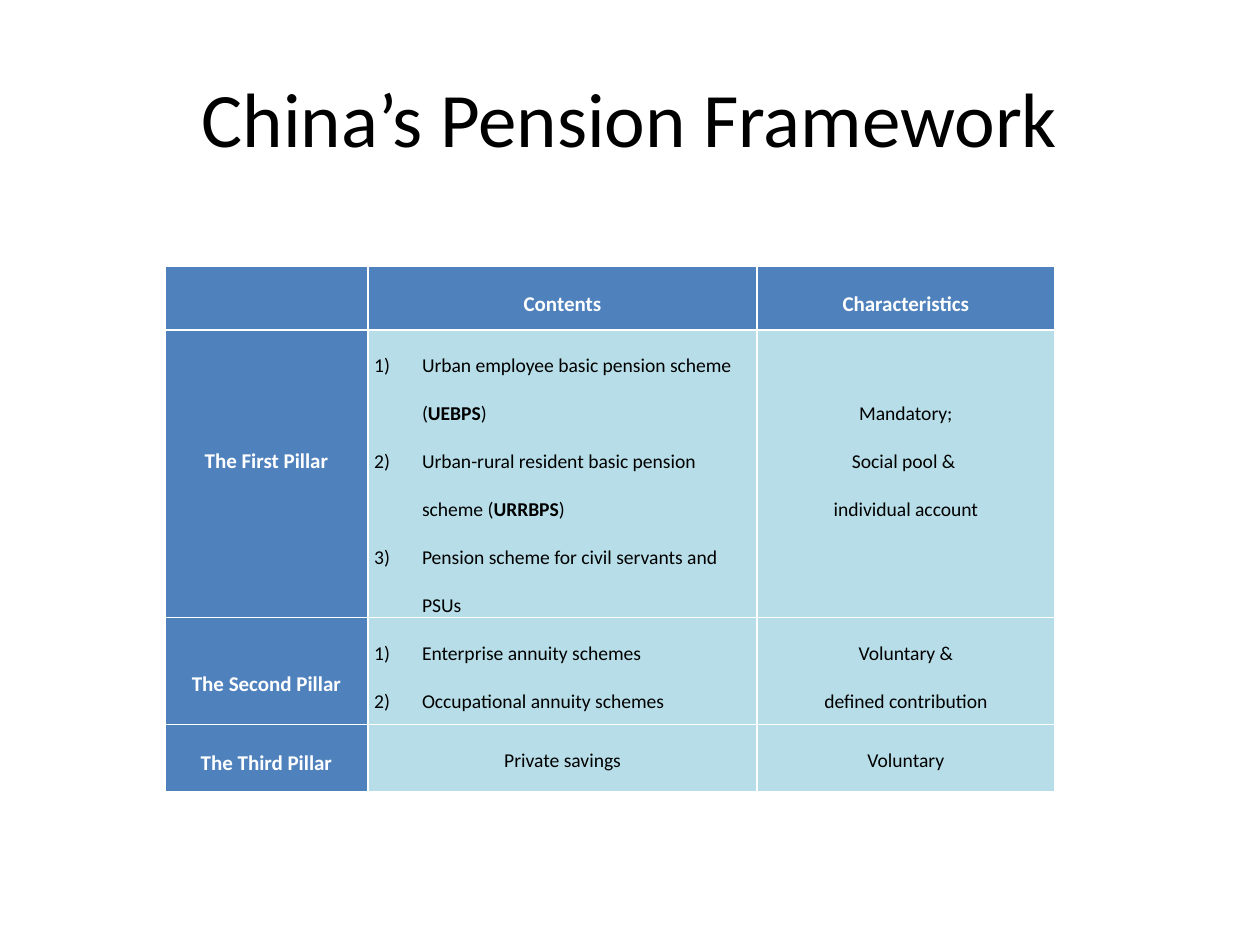
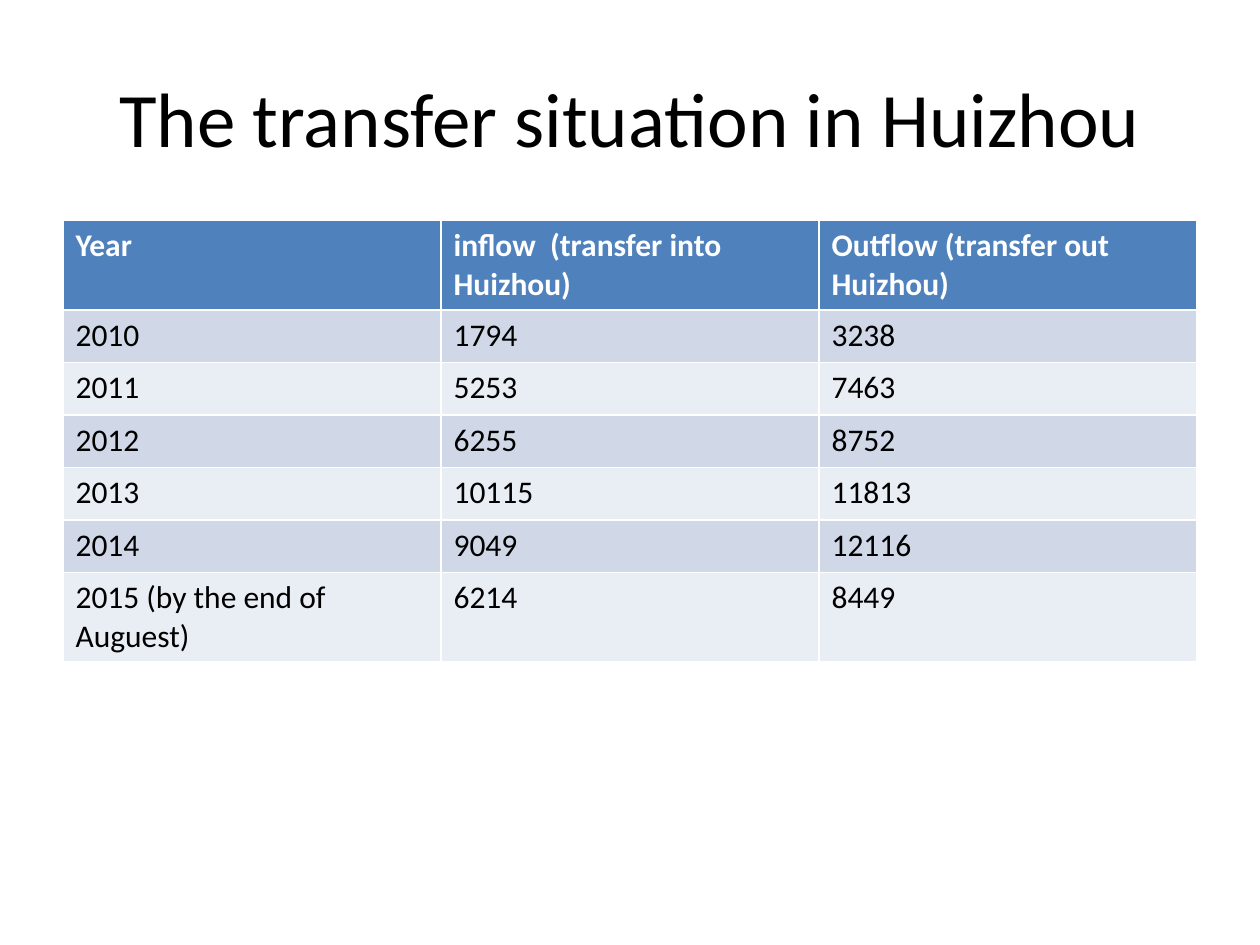
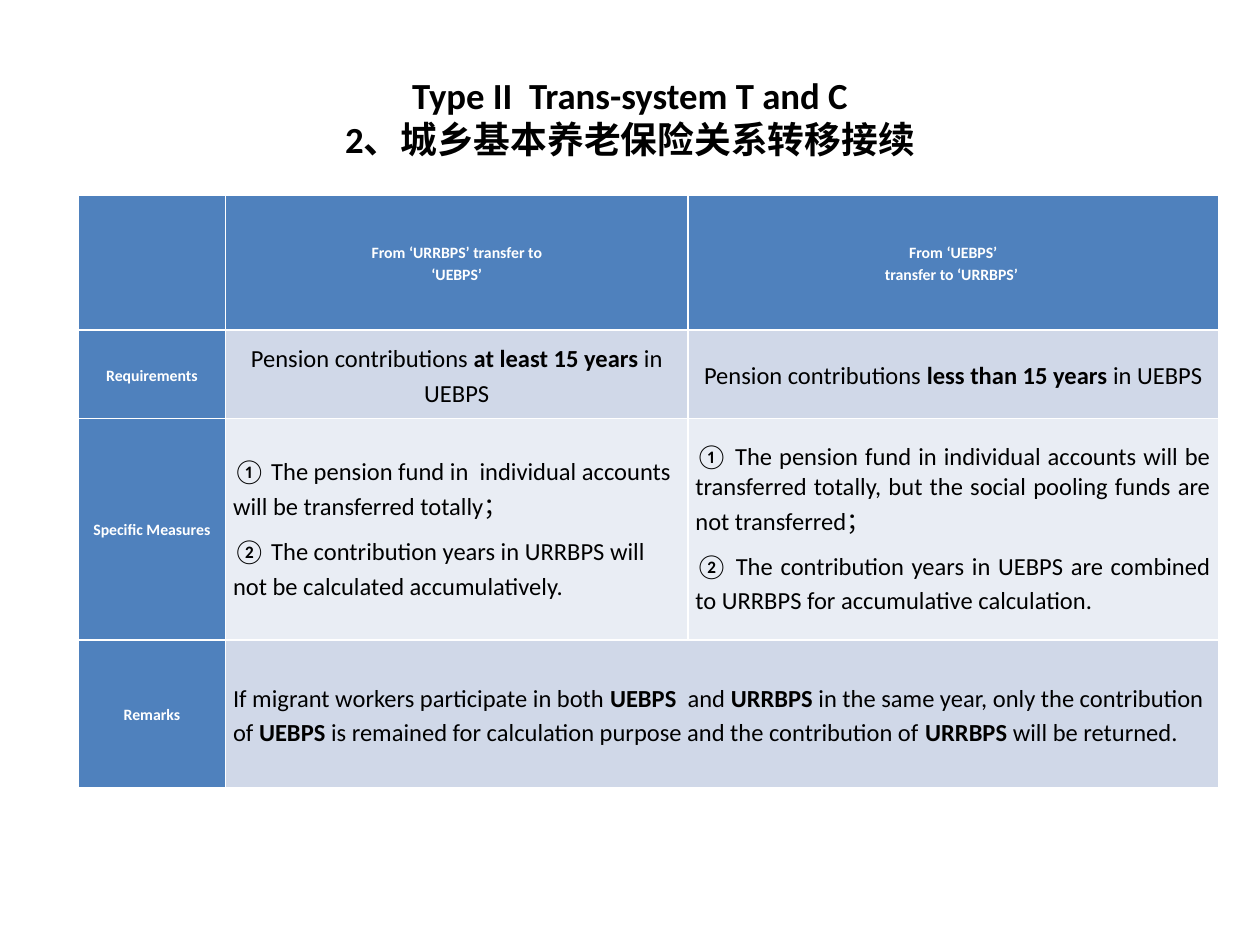
from dataclasses import dataclass, replace

from lxml.etree import SubElement
from pptx import Presentation
from pptx.dml.color import RGBColor
from pptx.enum.text import MSO_ANCHOR as Anchor, PP_ALIGN as Align
from pptx.oxml.ns import qn
from pptx.util import Emu, Inches, Pt

COLORS = {
    "header": "4F81BD",
    "light": "FFFFFF",
    "dark": "000000",
    "aqua": "B7DEE8",
    "band": "D0D8E8",
    "pale": "E9EDF4",
}
FONT = "Calibri"
WIDTH, HEIGHT = Inches(10), Inches(7.5)
TITLE_ONLY = 5
NUMBER_INDENT = 3.8


@dataclass(frozen=True)
class Style:
    size: float
    fill: str
    color: str = "dark"
    bold: bool = False
    align: Align = Align.LEFT
    anchor: Anchor = Anchor.TOP
    spacing: float = 1.0
    first_spacing: float | None = None
    first_gap: float = 0
    numbered: bool = False
    side: float = 1.0
    top: float = 0
    bottom: float = 0


@dataclass(frozen=True)
class Cell:
    style: Style
    lines: tuple[str, ...] = ()
    span: int = 1


@dataclass(frozen=True)
class TableSlide:
    title: tuple[str, ...]
    title_size: float
    title_bold: bool
    left: float
    top: float
    columns: tuple[float, ...]
    rows: tuple[float, ...]
    cells: tuple[tuple[Cell, ...], ...]


def across(percent: float) -> Emu:
    return Emu(round(WIDTH * percent / 100))


def down(percent: float) -> Emu:
    return Emu(round(HEIGHT * percent / 100))


def add_run(paragraph, text: str, size: float, color: str, bold: bool) -> None:
    run = paragraph.add_run()
    run.text = text
    run.font.name = FONT
    run.font.size = Pt(size)
    run.font.bold = bold
    run.font.color.rgb = RGBColor.from_string(COLORS[color])


def add_number(paragraph) -> None:
    properties = paragraph._p.get_or_add_pPr()
    indent = across(NUMBER_INDENT)
    properties.set("marL", str(indent))
    properties.set("indent", str(-indent))
    SubElement(properties, qn("a:buFont"), typeface="+mj-lt")
    SubElement(properties, qn("a:buAutoNum"), type="arabicParenR")


def fill_cell(table_cell, cell: Cell) -> None:
    style = cell.style
    table_cell.fill.solid()
    table_cell.fill.fore_color.rgb = RGBColor.from_string(COLORS[style.fill])
    table_cell.vertical_anchor = style.anchor
    table_cell.margin_left = table_cell.margin_right = across(style.side)
    table_cell.margin_top = down(style.top)
    table_cell.margin_bottom = down(style.bottom)
    frame = table_cell.text_frame
    for index, line in enumerate(cell.lines):
        paragraph = frame.add_paragraph() if index else frame.paragraphs[0]
        paragraph.alignment = style.align
        paragraph.line_spacing = style.spacing
        if index == 0:
            paragraph.line_spacing = style.first_spacing or style.spacing
            paragraph.space_after = Pt(style.first_gap)
        if style.numbered:
            add_number(paragraph)
        for position, text in enumerate(line.split("**")):
            if text:
                add_run(paragraph, text, style.size, style.color, style.bold or position % 2 == 1)


def add_title(slide, content: TableSlide) -> None:
    paragraph = slide.shapes.title.text_frame.paragraphs[0]
    paragraph.alignment = Align.CENTER
    for index, line in enumerate(content.title):
        if index:
            paragraph.add_line_break()
        add_run(paragraph, line, content.title_size, "dark", content.title_bold)


def add_table_slide(presentation, content: TableSlide) -> None:
    slide = presentation.slides.add_slide(presentation.slide_layouts[TITLE_ONLY])
    add_title(slide, content)
    table = slide.shapes.add_table(
        len(content.rows), len(content.columns),
        across(content.left), down(content.top),
        across(sum(content.columns)), down(sum(content.rows)),
    ).table
    table.horz_banding = False
    for column, width in zip(table.columns, content.columns):
        column.width = across(width)
    for row, height in zip(table.rows, content.rows):
        row.height = down(height)
    for row_index, row_cells in enumerate(content.cells):
        for column_index, cell in enumerate(row_cells):
            table_cell = table.cell(row_index, column_index)
            if cell.span > 1:
                table_cell.merge(table.cell(row_index, column_index + cell.span - 1))
            fill_cell(table_cell, cell)


def framework_slide() -> TableSlide:
    header = Style(12, "header", "light", True, Align.CENTER, spacing=2, side=0.5)
    label = replace(header, anchor=Anchor.MIDDLE)
    centered = Style(11.2, "aqua", align=Align.CENTER, spacing=2, side=0.5)
    numbered = replace(centered, align=Align.LEFT, numbered=True)
    return TableSlide(
        title=("China’s Pension Framework",), title_size=44, title_bold=False,
        left=13.1, top=28.13,
        columns=(16.1, 30.9, 23.6), rows=(6.8, 30.4, 11.33, 7.07),
        cells=(
            (Cell(header), Cell(header, ("Contents",)), Cell(header, ("Characteristics",))),
            (
                Cell(replace(label, bottom=5.43), ("The First Pillar",)),
                Cell(replace(numbered, anchor=Anchor.MIDDLE), (
                    "Urban employee basic pension scheme (**UEBPS**)",
                    "Urban-rural resident basic pension scheme (**URRBPS**)",
                    "Pension scheme for civil servants and PSUs",
                )),
                Cell(replace(centered, anchor=Anchor.MIDDLE, bottom=5.07),
                     ("Mandatory;", "Social pool & ", "individual account")),
            ),
            (
                Cell(label, ("The Second Pillar",)),
                Cell(numbered, ("Enterprise annuity schemes", "Occupational annuity schemes")),
                Cell(centered, ("Voluntary &", "defined contribution")),
            ),
            (
                Cell(header, ("The Third Pillar",)),
                Cell(centered, ("Private savings",)),
                Cell(centered, ("Voluntary",)),
            ),
        ),
    )


def transfer_slide() -> TableSlide:
    header = Style(18, "header", "light", True, top=0.67, bottom=0.67)
    bands = [replace(header, fill=fill, color="dark", bold=False) for fill in ("band", "pale")]
    headings = ("Year", "inflow  (transfer into Huizhou)", "Outflow (transfer out  Huizhou)")
    transfers = (
        ("2010", "1794", "3238"),
        ("2011", "5253", "7463"),
        ("2012", "6255", "8752"),
        ("2013", "10115", "11813"),
        ("2014", "9049", "12116"),
        ("2015 (by the end of Auguest)", "6214", "8449"),
    )
    return TableSlide(
        title=("The transfer situation in Huizhou",), title_size=44, title_bold=False,
        left=5, top=23.33,
        columns=(30,) * 3, rows=(5.56,) * 7,
        cells=(
            tuple(Cell(header, (text,)) for text in headings),
            *(
                tuple(Cell(bands[index % 2], (text,)) for text in values)
                for index, values in enumerate(transfers)
            ),
        ),
    )


def system_slide() -> TableSlide:
    header = Style(9, "header", "light", True, Align.CENTER, Anchor.MIDDLE, 1.15, side=0.6)
    requirement = replace(header, size=14, fill="band", color="dark", bold=False)
    measure = replace(requirement, fill="pale", align=Align.LEFT, first_spacing=1.0, first_gap=6)
    justified = replace(measure, align=Align.JUSTIFY)
    remark = replace(requirement, align=Align.LEFT)
    return TableSlide(
        title=("Type II  Trans-system T and C", "2、城乡基本养老保险关系转移接续"),
        title_size=21, title_bold=True,
        left=6.2, top=20.67,
        columns=(11.7, 36.7, 42.1), rows=(14.27, 9.33, 23.47, 15.6),
        cells=(
            (
                Cell(header),
                Cell(header, ("From ‘URRBPS’ transfer to", "‘UEBPS’")),
                Cell(header, ("From ‘UEBPS’", "transfer to ‘URRBPS’ ")),
            ),
            (
                Cell(header, ("Requirements",)),
                Cell(requirement, ("Pension contributions **at least 15 years **in UEBPS",)),
                Cell(requirement, ("Pension contributions **less than 15 years **in UEBPS",)),
            ),
            (
                Cell(header, ("Specific Measures",)),
                Cell(measure, (
                    "① The pension fund in  individual accounts will be transferred totally；",
                    "② The contribution years in URRBPS will not be calculated accumulatively.",
                )),
                Cell(justified, (
                    "① The pension fund in individual accounts will be transferred totally, "
                    "but the social pooling funds are not transferred；",
                    "② The contribution years in UEBPS are combined to URRBPS "
                    "for accumulative calculation. ",
                )),
            ),
            (
                Cell(header, ("Remarks",)),
                Cell(remark, (
                    "If migrant workers participate in both **UEBPS  **and **URRBPS** in the same "
                    "year, only the contribution of **UEBPS **is remained for calculation purpose "
                    "and the contribution of **URRBPS** will be returned.",
                ), span=2),
            ),
        ),
    )


def main() -> None:
    presentation = Presentation()
    presentation.slide_width, presentation.slide_height = WIDTH, HEIGHT
    for content in (framework_slide(), transfer_slide(), system_slide()):
        add_table_slide(presentation, content)
    presentation.save("out.pptx")


if __name__ == "__main__":
    main()
